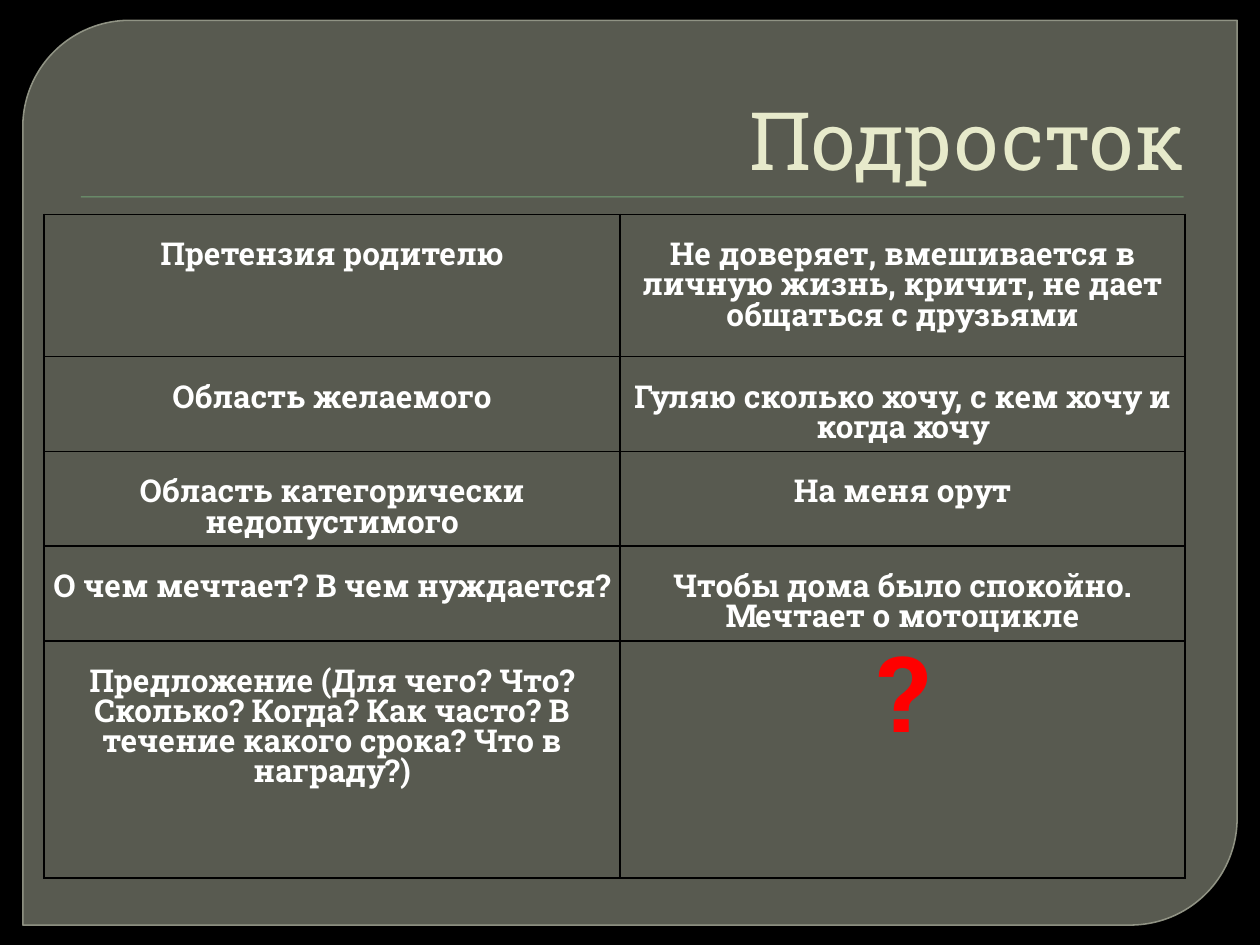
from lxml.etree import SubElement as Sub
from pptx import Presentation
from pptx.dml.color import RGBColor as RGB
from pptx.enum.shapes import MSO_SHAPE as SHAPE
from pptx.enum.text import MSO_ANCHOR as ANCHOR, PP_ALIGN as ALIGN
from pptx.oxml.ns import qn
from pptx.util import Cm, Pt

TITLE = "Подросток"
ROWS = [
    ("Претензия родителю",
     "Не доверяет, вмешивается в личную жизнь, кричит, не дает общаться с друзьями"),
    ("Область желаемого", "Гуляю сколько хочу, с кем хочу и когда хочу"),
    ("Область категорически недопустимого", "На меня орут"),
    ("О чем мечтает? В чем нуждается?", "Чтобы дома было спокойно. Мечтает о мотоцикле"),
    ("Предложение (Для чего? Что? Сколько? Когда? Как часто? "
     "В течение какого срока? Что в награду?)", "?"),
]
COL_WIDTHS = (11.61, 11.39)
ROW_HEIGHTS = (2.87, 1.91, 1.91, 1.91, 4.78)
THEME = {
    "font": "Roboto Slab", "back": "000000", "panel": "888B7B", "edge": "9DA090",
    "rule": "72A376", "title": "E7EACB", "text": "FFFFFF", "accent": "FF0000",
    "border": "000000", "title_size": 46, "text_size": 18, "accent_size": 60,
    "leading": 17.2,
}


def color(name):
    return RGB.from_string(THEME[name])


def add_panel(s, kind, box, fill):
    sp = s.shapes.add_shape(kind, *map(Cm, box))
    sp.shadow.inherit = False
    sp.fill.solid()
    sp.fill.fore_color.rgb = color(fill)
    sp.line.fill.background()
    return sp


def set_alpha(fill, percent):
    Sub(fill.find(".//" + qn("a:srgbClr")), qn("a:alpha"), val=str(percent * 1000))


def add_text(tf, text, size, ink, align, bold=False):
    tf.word_wrap = True
    p = tf.paragraphs[0]
    p.alignment = align
    r = p.add_run()
    r.text = text
    r.font.name, r.font.size, r.font.bold = THEME["font"], Pt(THEME[size]), bold
    r.font.color.rgb = color(ink)
    return p


def add_borders(cell):
    tc_pr = cell._tc.get_or_add_tcPr()
    for side in ("lnL", "lnR", "lnT", "lnB"):
        ln = Sub(tc_pr, qn("a:" + side), w=str(Pt(1)))
        Sub(Sub(ln, qn("a:solidFill")), qn("a:srgbClr"), val=THEME["border"])


def fill_cell(cell, text):
    accent = text == "?"
    add_borders(cell)
    cell.fill.background()
    cell.margin_left = cell.margin_right = Cm(0.18)
    cell.margin_top = Pt(THEME["leading"] * (3 if accent else 1))
    cell.margin_bottom = 0
    size, ink = ("accent_size", "accent") if accent else ("text_size", "text")
    p = add_text(cell.text_frame, text, size, ink, ALIGN.CENTER, True)
    p.line_spacing = Pt(THEME["leading"])


def add_grid(s):
    gf = s.shapes.add_table(len(ROWS), len(COL_WIDTHS), Cm(0.89), Cm(4.32),
                            Cm(sum(COL_WIDTHS)), Cm(sum(ROW_HEIGHTS)))
    table = gf.table
    table.first_row = table.horz_banding = False
    for col, width in zip(table.columns, COL_WIDTHS):
        col.width = Cm(width)
    for row, height, texts in zip(table.rows, ROW_HEIGHTS, ROWS):
        row.height = Cm(height)
        for cell, text in zip(row.cells, texts):
            fill_cell(cell, text)


def main():
    """Build the slide with the teenager's claims and wishes."""
    prs = Presentation()
    prs.slide_width, prs.slide_height = Cm(25.4), Cm(19.05)
    s = prs.slides.add_slide(prs.slide_layouts[6])
    s.background.fill.solid()
    s.background.fill.fore_color.rgb = color("back")

    panel = add_panel(s, SHAPE.ROUND_2_DIAG_RECTANGLE, (0.46, 0.41, 24.48, 18.24), "panel")
    panel.adjustments[0], panel.adjustments[1] = 0.118, 0
    set_alpha(panel._element.spPr.find(qn("a:solidFill")), 65)
    panel.line.color.rgb = color("edge")
    panel.line.width = Pt(0.87)
    set_alpha(panel._element.spPr.find(qn("a:ln")), 88)
    add_panel(s, SHAPE.RECTANGLE, (1.63, 3.96, 22.23, 0.02), "rule")

    tf = s.shapes.add_textbox(Cm(1.27), Cm(0.71), Cm(22.86), Cm(3.18)).text_frame
    tf.vertical_anchor = ANCHOR.BOTTOM
    add_text(tf, TITLE, "title_size", "title", ALIGN.RIGHT)
    add_grid(s)
    prs.save("out.pptx")


if __name__ == "__main__":
    main()
